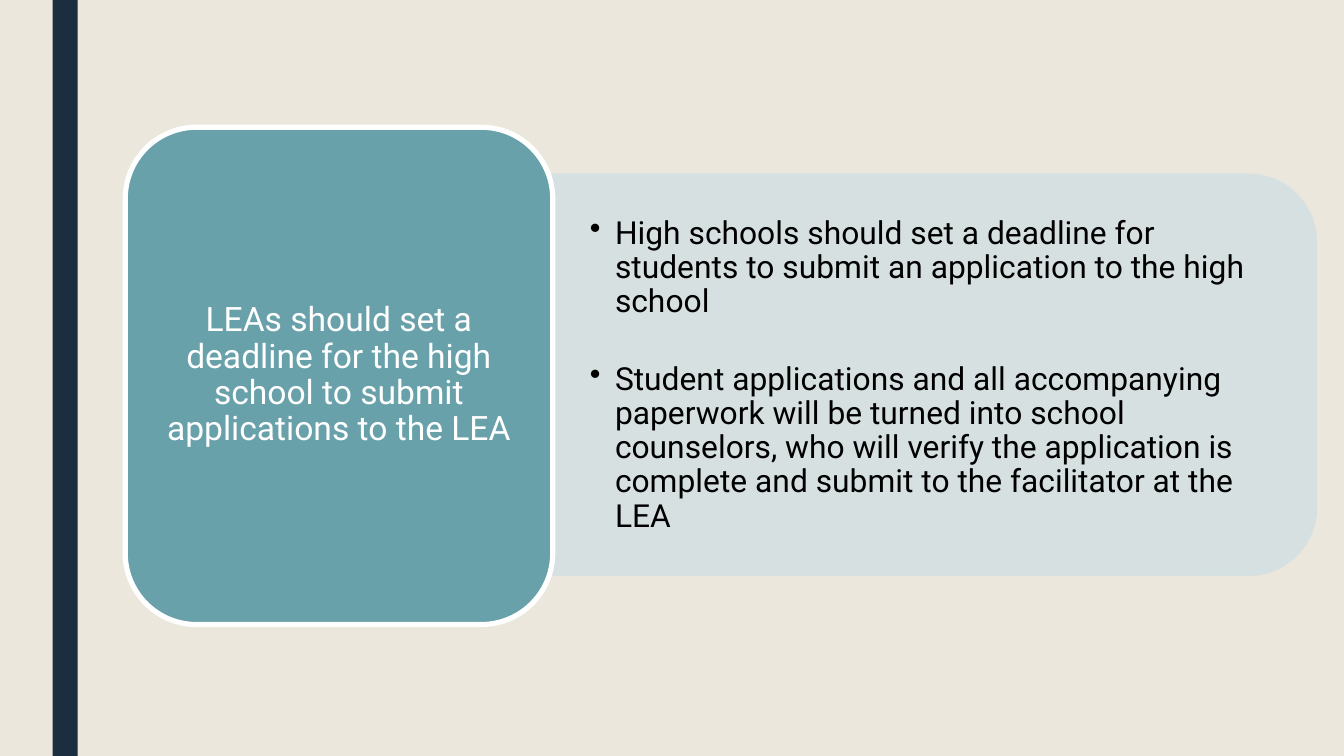
from dataclasses import dataclass
from typing import Any, Optional

import lxml.etree
import pptx
import pptx.dml.color
import pptx.enum.shapes
import pptx.enum.text
import pptx.oxml.ns
import pptx.util

Pt = pptx.util.Pt
Shapes = pptx.enum.shapes.MSO_SHAPE
Align = pptx.enum.text.PP_ALIGN
FONT = "Roboto"


@dataclass(frozen=True)
class Box:
    left: float
    top: float
    width: float
    height: float

    def lengths(self) -> list[int]:
        return [Pt(value) for value in (self.left, self.top, self.width, self.height)]


@dataclass(frozen=True)
class Panel:
    kind: Any
    box: Box
    fill: str
    line: Optional[str] = None
    rotation: float = 0
    opacity: int = 100


@dataclass(frozen=True)
class TextBlock:
    box: Box
    paragraphs: tuple[str, ...]
    size: float
    color: str
    alignment: Any
    side_inset: float
    end_inset: float
    gap: float = 0
    bullet_indent: float = 0


PANELS = (
    Panel(Shapes.RECTANGLE, Box(28.2, 0, 13.5, 405), "1A2E40"),
    Panel(Shapes.ROUND_2_SAME_RECTANGLE, Box(394, -2.9, 213, 407.5), "D4E0E2", "D4E0E2", 90, 90),
    Panel(Shapes.ROUNDED_RECTANGLE, Box(67.1, 68.2, 229, 266.4), "69A1AB", "FFFFFF"),
)

TEXT_BLOCKS = (
    TextBlock(
        Box(296.6, 105.1, 397.4, 192.2),
        (
            "High schools should set a deadline for students to submit an application to the high school",
            "Student applications and all accompanying paperwork will be turned into school counselors, "
            "who will verify the application is complete and submit to the facilitator at the LEA",
        ),
        17, "000000", Align.LEFT, 19.4, 10, gap=23, bullet_indent=13.5,
    ),
    TextBlock(
        Box(78.3, 79.3, 206.6, 243.6),
        ("LEAs should set a deadline for the high school to submit applications to the LEA",),
        18, "FFFFFF", Align.CENTER, 5, 3,
    ),
)


def rgb(value: str) -> pptx.dml.color.RGBColor:
    return pptx.dml.color.RGBColor.from_string(value)


def apply_format(target: Any, values: dict[str, Any]) -> None:
    for name, value in values.items():
        setattr(target, name, value)


def draw_panel(slide: Any, panel: Panel) -> None:
    shape = slide.shapes.add_shape(panel.kind, *panel.box.lengths())
    shape.shadow.inherit = False
    shape.rotation = panel.rotation
    shape.fill.solid()
    shape.fill.fore_color.rgb = rgb(panel.fill)
    if panel.line:
        shape.line.color.rgb = rgb(panel.line)
        shape.line.width = Pt(2.75)
    else:
        shape.line.fill.background()
    if panel.opacity < 100:
        for color in shape.element.spPr.iter(pptx.oxml.ns.qn("a:srgbClr")):
            alpha = lxml.etree.SubElement(color, pptx.oxml.ns.qn("a:alpha"))
            alpha.set("val", str(panel.opacity * 1000))


def add_bullet(paragraph: Any, indent: float) -> None:
    properties = paragraph._p.get_or_add_pPr()
    properties.set("marL", str(Pt(indent)))
    properties.set("indent", str(-Pt(indent)))
    bullet = lxml.etree.SubElement(properties, pptx.oxml.ns.qn("a:buChar"))
    bullet.set("char", "•")


def draw_text(slide: Any, block: TextBlock) -> None:
    frame = slide.shapes.add_textbox(*block.box.lengths()).text_frame
    apply_format(frame, {
        "word_wrap": True,
        "vertical_anchor": pptx.enum.text.MSO_ANCHOR.MIDDLE,
        "margin_left": Pt(block.side_inset),
        "margin_right": Pt(block.side_inset),
        "margin_top": Pt(block.end_inset),
        "margin_bottom": Pt(block.end_inset),
    })
    for index, text in enumerate(block.paragraphs):
        paragraph = frame.add_paragraph() if index else frame.paragraphs[0]
        apply_format(paragraph, {
            "alignment": block.alignment,
            "line_spacing": 0.9,
            "space_before": Pt(block.gap if index else 0),
        })
        run = paragraph.add_run()
        run.text = text
        apply_format(run.font, {"name": FONT, "size": Pt(block.size)})
        run.font.color.rgb = rgb(block.color)
        if block.bullet_indent:
            add_bullet(paragraph, block.bullet_indent)


def main() -> None:
    presentation = pptx.Presentation()
    apply_format(presentation, {"slide_width": Pt(720), "slide_height": Pt(405)})
    slide = presentation.slides.add_slide(presentation.slide_layouts[6])
    slide.background.fill.solid()
    slide.background.fill.fore_color.rgb = rgb("EBE7DD")
    for panel in PANELS:
        draw_panel(slide, panel)
    for block in TEXT_BLOCKS:
        draw_text(slide, block)
    presentation.save("out.pptx")


if __name__ == "__main__":
    main()
